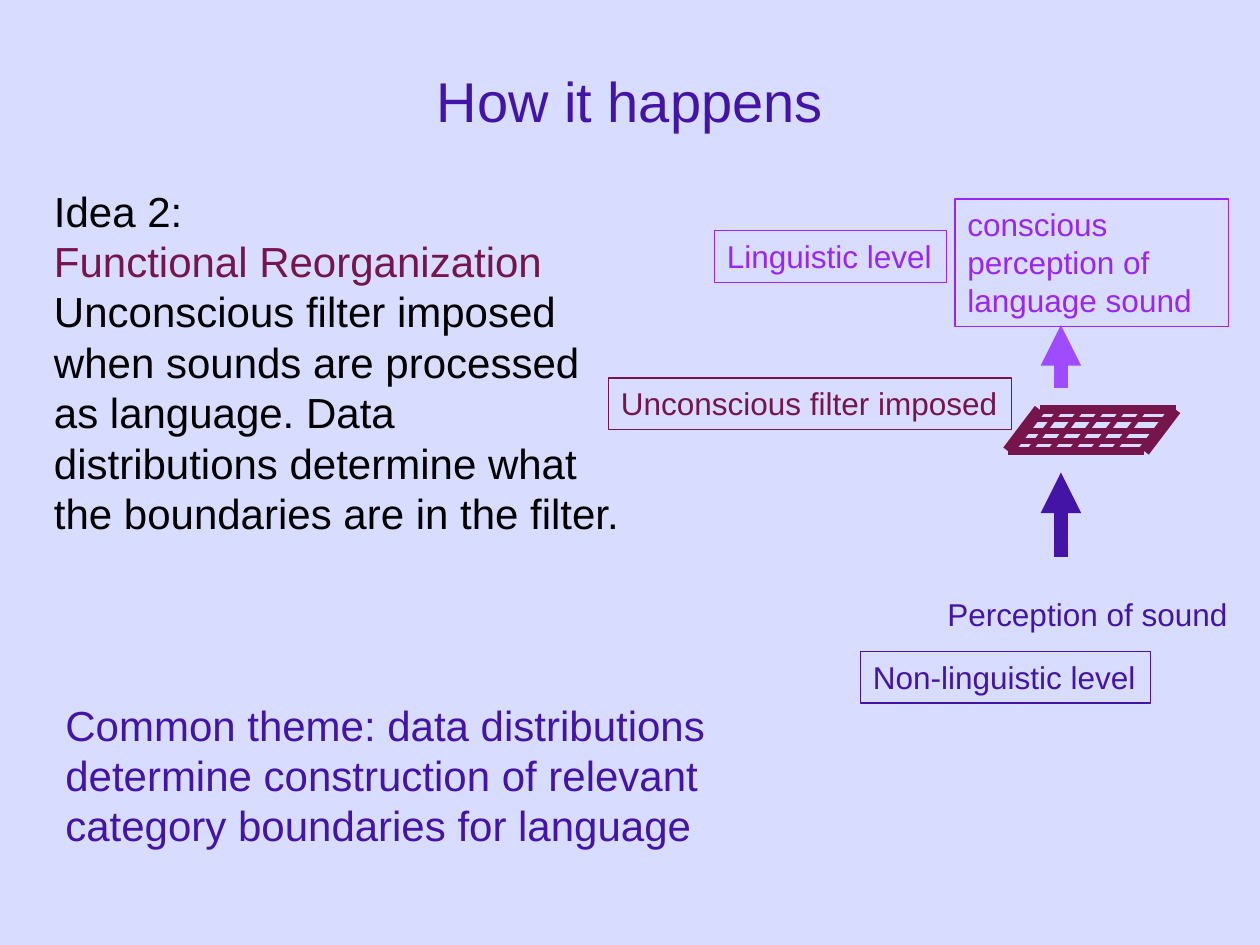
from dataclasses import dataclass
from lxml import etree
from pptx import Presentation
from pptx.dml.color import RGBColor
from pptx.enum.shapes import MSO_CONNECTOR
from pptx.enum.text import MSO_ANCHOR, MSO_AUTO_SIZE, PP_ALIGN
from pptx.oxml.ns import qn
from pptx.util import Inches, Pt

STRAIGHT = MSO_CONNECTOR.STRAIGHT
MIDDLE, TOP = MSO_ANCHOR.MIDDLE, MSO_ANCHOR.TOP
FIT_SHAPE, FIT_NONE = MSO_AUTO_SIZE.SHAPE_TO_FIT_TEXT, MSO_AUTO_SIZE.NONE
CENTER, LEFT = PP_ALIGN.CENTER, PP_ALIGN.LEFT

FONT = "Arial"
COLORS = {
    "background": "D8DCFF",
    "indigo": "4414A7",
    "purple": "9B25F1",
    "violet": "9F4BFF",
    "plum": "76154B",
    "black": "000000",
}


@dataclass(frozen=True)
class Paragraph:
    text: str
    color: str


@dataclass(frozen=True)
class TextBlock:
    box: tuple[float, float, float, float]
    paragraphs: tuple[Paragraph, ...]
    size: int = 24
    wrap: bool = True
    border: str | None = None
    title: bool = False


@dataclass(frozen=True)
class Line:
    start: tuple[float, float]
    end: tuple[float, float]
    color: str
    width: float
    arrow: bool = False


def rgb(name: str) -> RGBColor:
    return RGBColor.from_string(COLORS[name])


def label(box: tuple[float, float, float, float], text: str, color: str,
          wrap: bool = False, framed: bool = True) -> TextBlock:
    return TextBlock(box, (Paragraph(text, color),), 18, wrap, color if framed else None)


def draw_text(slide, block: TextBlock) -> None:
    sp = slide.shapes.add_textbox(*map(Inches, block.box))
    if block.border:
        sp.line.color.rgb = rgb(block.border)
        sp.line.width = Pt(0.75)
    tf = sp.text_frame
    tf.word_wrap = block.wrap
    tf.auto_size = FIT_NONE if block.title else FIT_SHAPE
    tf.vertical_anchor = MIDDLE if block.title else TOP
    for i, paragraph in enumerate(block.paragraphs):
        p = tf.add_paragraph() if i else tf.paragraphs[0]
        p.text = paragraph.text
        p.alignment = CENTER if block.title else LEFT
        p.font.name = FONT
        p.font.size = Pt(block.size)
        p.font.color.rgb = rgb(paragraph.color)


def draw_line(slide, line: Line) -> None:
    cxn = slide.shapes.add_connector(STRAIGHT, *map(Inches, line.start + line.end))
    cxn.line.color.rgb = rgb(line.color)
    cxn.line.width = Pt(line.width)
    if line.arrow:
        etree.SubElement(cxn.line._get_or_add_ln(), qn("a:tailEnd"), type="triangle")
    etree.SubElement(cxn._element.spPr, qn("a:effectLst"))


def filter_mesh() -> list[Line]:
    left, top, width, height, slant, step = 8.25, 3.25, 1.08, 0.33, 0.25, 1 / 6
    slats = [(0, 6.75), (width, 6.75)] + [(i * step, 3) for i in range(1, 1 + 5)]
    rows = [(0, 0, 4.75), (0.08, 0.08, 3), (0.17, 0.17, 3), (0.17, 0.25, 3), (slant, height, 4.5)]
    lines = [Line((left + x, top), (left + x - slant, top + height), "plum", weight)
             for x, weight in slats]
    lines += [Line((left + width - shift, top + y), (left - shift, top + y), "plum", weight)
              for shift, y, weight in rows]
    return lines


TEXTS = [
    TextBlock((0.75, 0.17, 8.5, 1.25), (Paragraph("How it happens", "indigo"),), 32, title=True),
    TextBlock((0.33, 1.42, 4.75, 2.9), (
        Paragraph("Idea 2:", "black"),
        Paragraph("Functional Reorganization", "plum"),
        Paragraph("Unconscious filter imposed when sounds are processed as language. "
                  "Data distributions determine what the boundaries are in the filter.", "black"),
    )),
    TextBlock((0.42, 5.5, 5.85, 1.3), (
        Paragraph("Common theme: data distributions determine construction of relevant "
                  "category boundaries for language", "indigo"),
    )),
    label((7.42, 4.67, 2.43, 0.4), "Perception of sound", "indigo", framed=False),
    label((6.83, 5.17, 2.3, 0.41), "Non-linguistic level", "indigo"),
    label((5.67, 1.83, 1.84, 0.41), "Linguistic level", "purple"),
]
LINES = [
    Line((8.42, 4.42), (8.42, 3.75), "indigo", 7.75, arrow=True),
    *filter_mesh(),
    Line((8.42, 3.08), (8.42, 2.58), "violet", 7.75, arrow=True),
]
FRONT_LABELS = [
    label((7.58, 1.58, 2.17, 1.01), "conscious perception of language sound", "purple", wrap=True),
    label((4.83, 3, 3.2, 0.41), "Unconscious filter imposed", "plum"),
]


def main() -> None:
    prs = Presentation()
    prs.slide_width, prs.slide_height = Inches(10), Inches(7.5)
    s = prs.slides.add_slide(prs.slide_layouts[6])
    s.background.fill.solid()
    s.background.fill.fore_color.rgb = rgb("background")
    for block in TEXTS:
        draw_text(s, block)
    for line in LINES:
        draw_line(s, line)
    for block in FRONT_LABELS:
        draw_text(s, block)
    prs.save("out.pptx")


if __name__ == "__main__":
    main()
